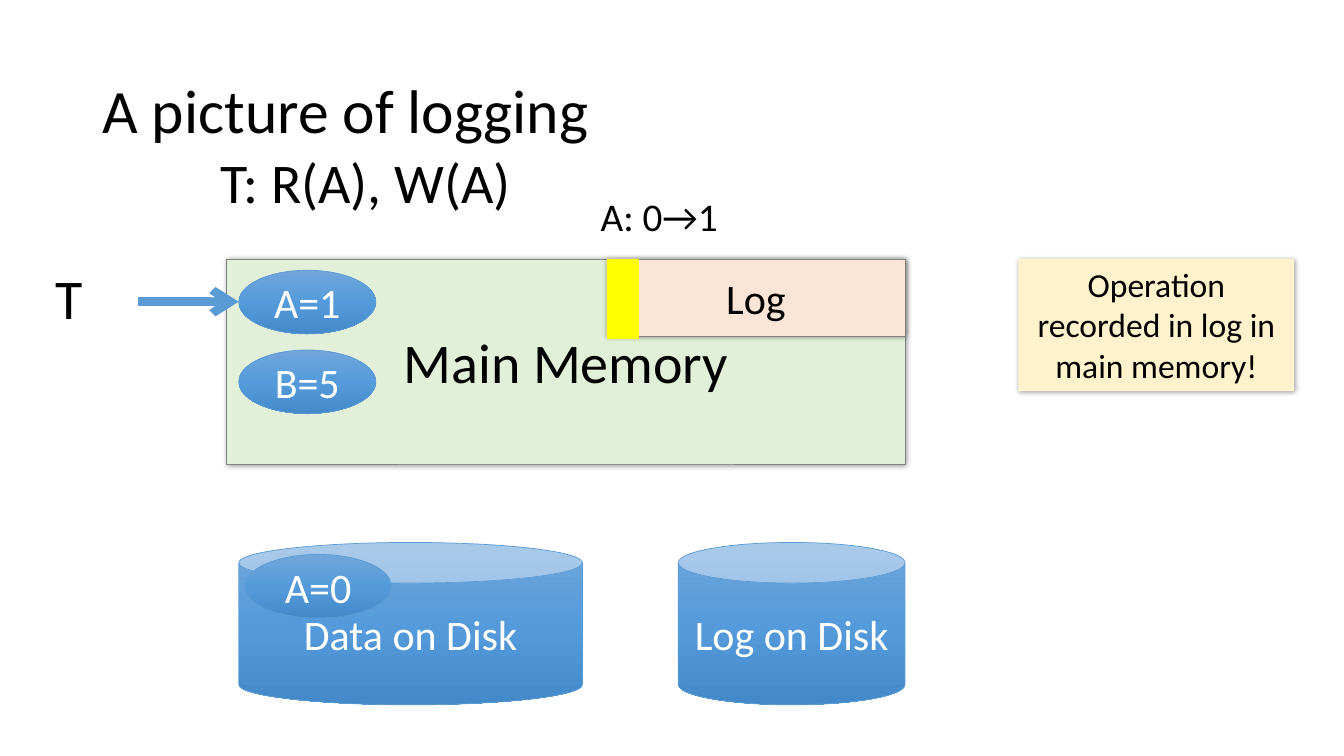
from pptx import Presentation
from pptx.dml.color import RGBColor
from pptx.enum.shapes import MSO_CONNECTOR, MSO_SHAPE as SHAPE
from pptx.enum.text import MSO_ANCHOR as ANCHOR, PP_ALIGN as ALIGN
from pptx.oxml import parse_xml
from pptx.oxml.ns import nsdecls
from pptx.util import Pt

BLUE, GREY, BLACK, WHITE = "5B9BD5", "808080", "000000", "FFFFFF"
rgb = RGBColor.from_string

prs = Presentation()
prs.slide_width, prs.slide_height = Pt(960), Pt(540)
slide = prs.slides.add_slide(prs.slide_layouts[5])


def write(shape, words, size, color=BLACK, align=ALIGN.CENTER, anchor=ANCHOR.MIDDLE):
    frame = shape.text_frame
    frame.word_wrap = True
    frame.vertical_anchor = anchor
    paragraph = frame.paragraphs[0]
    paragraph.alignment = align
    run = paragraph.add_run()
    run.text = words
    run.font.name, run.font.size = "Calibri", Pt(size)
    run.font.color.rgb = rgb(color)
    return paragraph


def block(kind, box, fill=None, line=None, shadow=False):
    """Add a shape; without a fill colour it gets the blue gradient."""
    shape = slide.shapes.add_shape(kind, *map(Pt, box))
    shape.shadow.inherit = False
    if fill:
        shape.fill.solid()
        shape.fill.fore_color.rgb = rgb(fill)
    else:
        shape.fill.gradient()
        shape.fill.gradient_angle = 270
        stops = shape.fill._fill._gradFill.find(".//{*}gsLst")
        stops.clear()
        for pos, color in ((0, "71A6DB"), (50, "559BDB"), (100, "448ACA")):
            stops.append(parse_xml(
                f'<a:gs {nsdecls("a")} pos="{pos * 1000}"><a:srgbClr val="{color}"/></a:gs>'))
    if line:
        shape.line.color.rgb = rgb(line)
        shape.line.width = Pt(0.5)
    else:
        shape.line.fill.background()
    if shadow:
        shape._element.spPr.find("{*}effectLst").append(parse_xml(
            f'<a:outerShdw {nsdecls("a")} blurRad="{Pt(4)}" dist="{Pt(1)}" dir="2700000" '
            'algn="tl" rotWithShape="0"><a:srgbClr val="000000"><a:alpha val="40000"/>'
            '</a:srgbClr></a:outerShdw>'))
    return shape


# Title
title = slide.shapes.title
title.left, title.top, title.width, title.height = map(Pt, (66, 28.8, 828, 104.4))
write(title, "A picture of logging", 44, align=ALIGN.LEFT).line_spacing = 0.9

# Disks and main memory with its log
DISK_TOP, DISK_HEIGHT, MEMORY_TOP = 387.5, 116, 185
data_disk = block(SHAPE.CAN, (170.5, DISK_TOP, 245.5, DISK_HEIGHT), line=BLUE)
write(data_disk, "Data on Disk", 30, WHITE)
memory = block(SHAPE.RECTANGLE, (162, MEMORY_TOP, 484.5, 146.5), "E2F0D9", GREY, True)
write(memory, "Main Memory", 40)
log_disk = block(SHAPE.CAN, (484.5, DISK_TOP, 162, DISK_HEIGHT), line=BLUE)
write(log_disk, "Log on Disk", 30, WHITE)
log = block(SHAPE.RECTANGLE, (433.5, MEMORY_TOP, 213, 55), "FBE5D6", GREY, True)
write(log, "Log", 30)

# Stored values
for value, left, top, width in (
    ("A=1", 170.5, 193, 98),
    ("B=5", 170.5, 250, 98),
    ("A=0", 175, 396, 104.5),
):
    write(block(SHAPE.OVAL, (left, top, width, 45.5), line=BLUE), value, 30, WHITE)

# Transaction arrow into A
arrow = slide.shapes.add_connector(
    MSO_CONNECTOR.STRAIGHT, Pt(98.5), Pt(215.5), Pt(170.5), Pt(215.5))
arrow.line.color.rgb = rgb(BLUE)
arrow.line.width = Pt(6)
arrow.line._get_or_add_ln().append(parse_xml(f'<a:tailEnd {nsdecls("a")} type="arrow"/>'))
arrow._element.spPr.append(parse_xml(f'<a:effectLst {nsdecls("a")}/>'))

# Labels
for words, box, size, align in (
    ("T ", (0, MEMORY_TOP, 107.5, 55.5), 40, ALIGN.CENTER),
    ("T: R(A), W(A) ", (120, 101.5, 291, 55.5), 40, ALIGN.CENTER),
    ("A: 0→1", (422, 133.5, 134.5, 41), 28, ALIGN.LEFT),
):
    label = slide.shapes.add_textbox(*map(Pt, box))
    write(label, words, size, align=align, anchor=ANCHOR.TOP)

# New log record and the remark on it
block(SHAPE.RECTANGLE, (433.5, 185.5, 22.5, 56.5), "FFFF00", "FFFF00")
remark = block(SHAPE.RECTANGLE, (727.5, MEMORY_TOP, 197, 94.5), "FFF2CC", shadow=True)
write(remark, "Operation recorded in log in main memory!", 24, anchor=ANCHOR.TOP)

prs.save("out.pptx")
